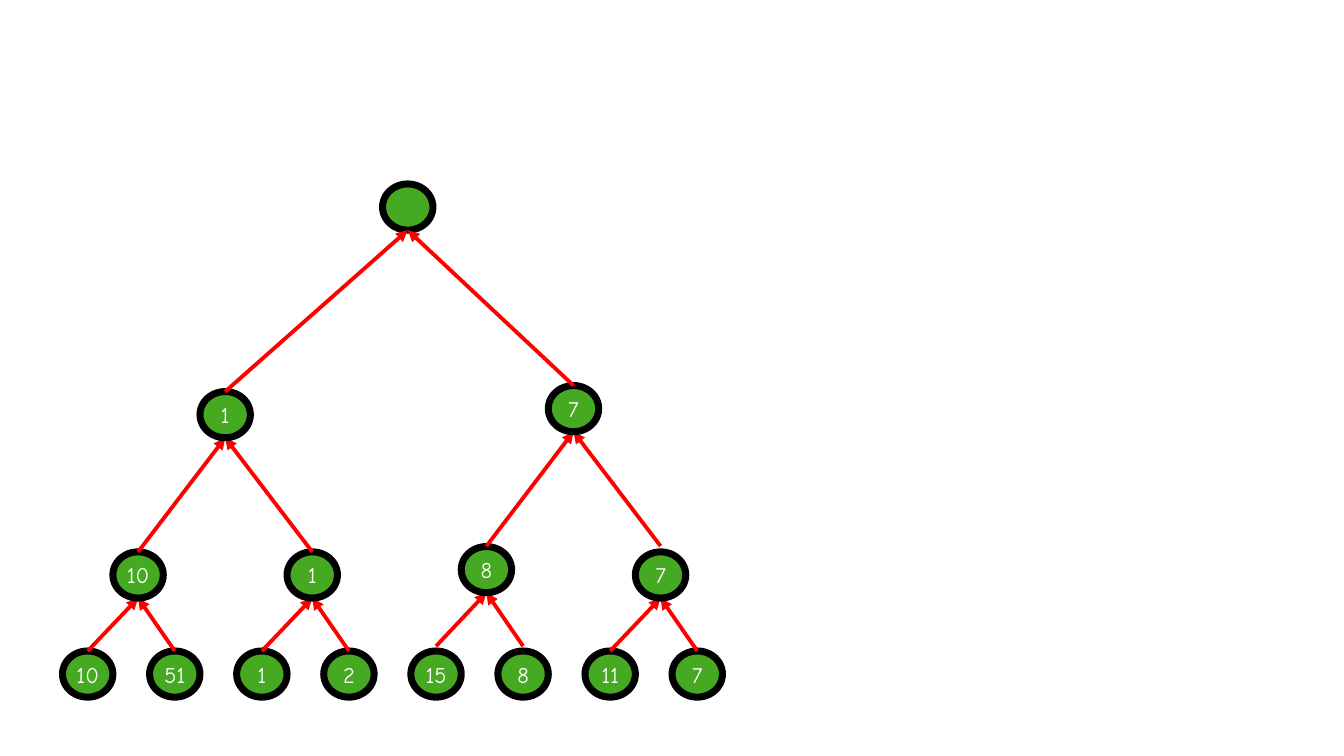
"""Build a slide showing a minimum tournament tree with arrows from children to parents."""
from lxml import etree
from pptx import Presentation
from pptx.dml.color import RGBColor
from pptx.enum.shapes import MSO_CONNECTOR, MSO_SHAPE
from pptx.enum.text import MSO_ANCHOR, PP_ALIGN
from pptx.oxml.ns import qn
from pptx.util import Pt

OVAL = MSO_SHAPE.OVAL
STRAIGHT = MSO_CONNECTOR.STRAIGHT
MIDDLE = MSO_ANCHOR.MIDDLE
CENTER = PP_ALIGN.CENTER

COLORS = {"node": "45AA21", "outline": "000000", "text": "FFFFFF", "arrow": "FF0000"}
FONT = "Comic Neue"

LEVELS = [
    {"labels": ["10", "51", "1", "2", "15", "8", "11", "7"], "tops": [930] * 8},
    {"labels": ["10", "1", "8", "7"], "tops": [788.4, 788.4, 780.8, 788.4],
     "shift": 9.8, "rise": 76.3},
    {"labels": ["1", "7"], "tops": [559.4, 550.8], "shift": 0, "rise": 163.4},
    {"labels": [""], "tops": [262.8], "shift": 12, "rise": 231.6},
]

SLIDE_WIDTH, SLIDE_HEIGHT = 1920, 1080
NODE_WIDTH, NODE_HEIGHT = 72, 66
FIRST_CENTER, LEAF_PITCH = 125.3, 124.4
INSET = 4.5


def rgb(name):
    return RGBColor.from_string(COLORS[name])


def add_node(slide, label, center, top):
    node = slide.shapes.add_shape(
        OVAL, Pt(center - NODE_WIDTH / 2), Pt(top), Pt(NODE_WIDTH), Pt(NODE_HEIGHT))
    node.shadow.inherit = False
    node.fill.solid()
    node.fill.fore_color.rgb = rgb("node")
    node.line.color.rgb = rgb("outline")
    node.line.width = Pt(10)
    if not label:
        return
    frame = node.text_frame
    frame.word_wrap = False
    frame.vertical_anchor = MIDDLE
    frame.margin_left = frame.margin_right = Pt(INSET)
    frame.margin_top = frame.margin_bottom = Pt(INSET)
    para = frame.paragraphs[0]
    para.alignment = CENTER
    span = para.add_run()
    span.text = label
    span.font.name = FONT
    span.font.size = Pt(32)
    span.font.color.rgb = rgb("text")


def add_arrow(slide, start, end):
    arrow = slide.shapes.add_connector(STRAIGHT, *(Pt(value) for value in start + end))
    arrow.line.color.rgb = rgb("arrow")
    arrow.line.width = Pt(5.5)
    etree.SubElement(arrow.line._get_or_add_ln(), qn("a:tailEnd"), type="triangle")
    etree.SubElement(arrow._element.spPr, qn("a:effectLst"))


def add_nodes(slide, level, centers):
    for label, center, top in zip(level["labels"], centers, level["tops"]):
        add_node(slide, label, center, top)


def add_arrows(slide, level, centers, child_level, child_centers):
    for index, (center, top) in enumerate(zip(centers, level["tops"])):
        bottom = top + NODE_HEIGHT
        for child in (2 * index, 2 * index + 1):
            start = min(child_level["tops"][child], bottom + level["rise"])
            add_arrow(slide, (child_centers[child], start), (center, bottom))


def main():
    deck = Presentation()
    deck.slide_width, deck.slide_height = Pt(SLIDE_WIDTH), Pt(SLIDE_HEIGHT)
    slide = deck.slides.add_slide(deck.slide_layouts[6])
    leaves, *parents = LEVELS
    centers = [FIRST_CENTER + LEAF_PITCH * index for index in range(len(leaves["labels"]))]
    add_nodes(slide, leaves, centers)
    child_level = leaves
    for level in parents:
        child_centers = centers
        centers = [(left + right) / 2 + level["shift"]
                   for left, right in zip(child_centers[::2], child_centers[1::2])]
        is_root = level is parents[-1]
        if is_root:
            add_nodes(slide, level, centers)
        add_arrows(slide, level, centers, child_level, child_centers)
        if not is_root:
            add_nodes(slide, level, centers)
        child_level = level
    deck.save("out.pptx")


if __name__ == "__main__":
    main()
